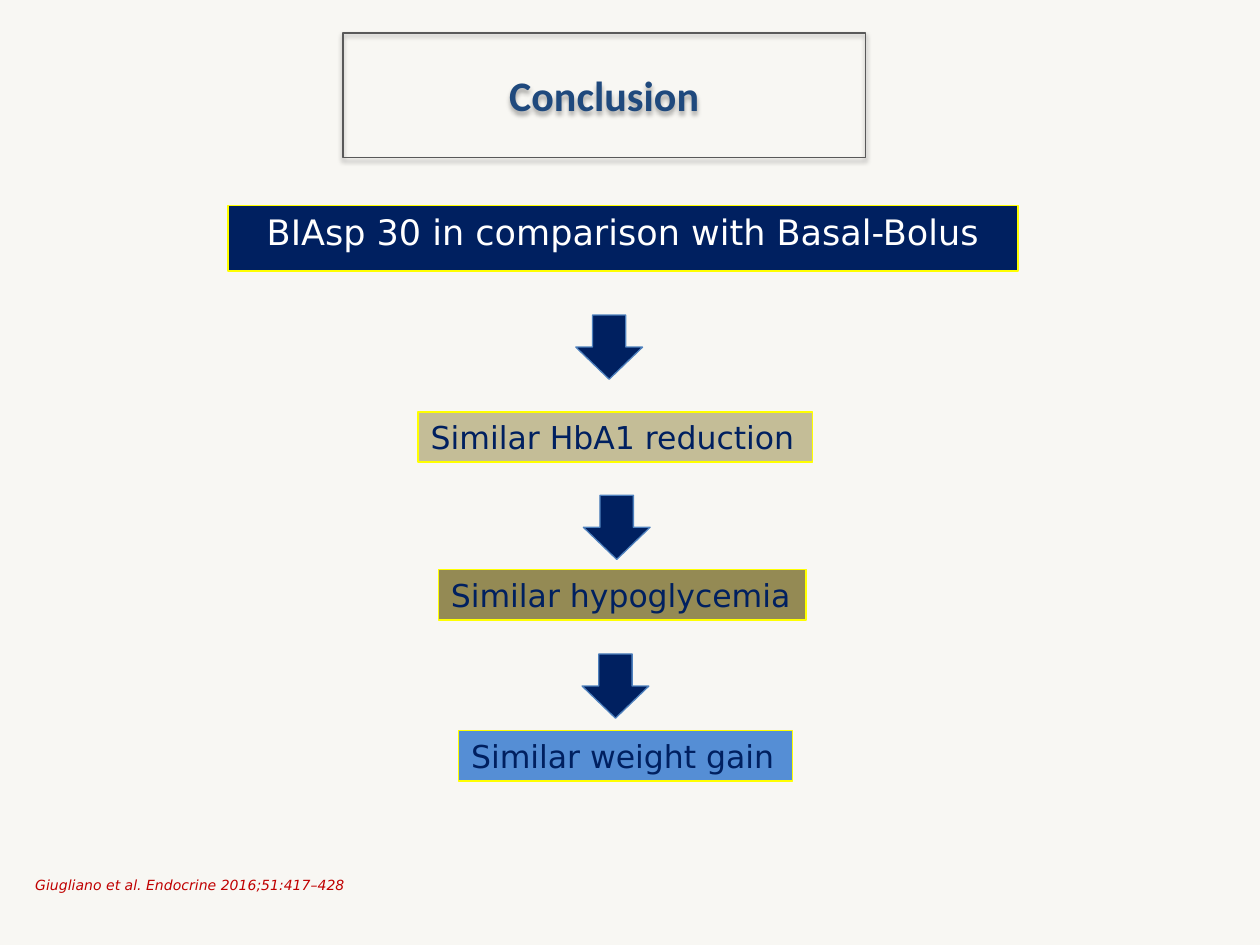
import pptx
import pptx.dml.color
import pptx.enum.shapes
import pptx.enum.text
import pptx.oxml
import pptx.oxml.ns
import pptx.util

Inches = pptx.util.Inches
Pt = pptx.util.Pt
RGBColor = pptx.dml.color.RGBColor
MSO_SHAPE = pptx.enum.shapes.MSO_SHAPE
PP_ALIGN = pptx.enum.text.PP_ALIGN
MSO_ANCHOR = pptx.enum.text.MSO_ANCHOR
MSO_AUTO_SIZE = pptx.enum.text.MSO_AUTO_SIZE

PAPER = RGBColor(0xF8, 0xF7, 0xF3)
NAVY = RGBColor(0x00, 0x20, 0x60)
YELLOW = RGBColor(0xFF, 0xFF, 0x00)
WHITE = RGBColor(0xFF, 0xFF, 0xFF)
ARROW_EDGE = RGBColor(0x4F, 0x81, 0xBD)
TITLE_BLUE = RGBColor(0x1F, 0x49, 0x7D)
TITLE_EDGE = RGBColor(0x59, 0x59, 0x59)
TAN = RGBColor(0xC4, 0xBD, 0x97)
OLIVE = RGBColor(0x94, 0x8A, 0x54)
SKY = RGBColor(0x55, 0x8E, 0xD5)
RED = RGBColor(0xC0, 0x00, 0x00)

NAMESPACE = pptx.oxml.ns.nsdecls("a")
ROUNDED = f'<a:prstGeom {NAMESPACE} prst="roundRect"><a:avLst/></a:prstGeom>'
SOFT_SHADOW = (
    f'<a:effectLst {NAMESPACE}><a:outerShdw blurRad="{Pt(3.1)}" dist="{Pt(1.8)}" '
    'dir="5400000" rotWithShape="0"><a:srgbClr val="000000"><a:alpha val="35000"/>'
    '</a:srgbClr></a:outerShdw></a:effectLst>'
)


class ConclusionSlide:
    """Holds the slide and its style."""

    body_font = "DejaVu Sans"
    title_font = "Calibri"

    def __init__(self, presentation):
        self.slide = presentation.slides.add_slide(presentation.slide_layouts[1])
        background = self.slide.background.fill
        background.solid()
        background.fore_color.rgb = PAPER

    def place(self, shape, left, top, width, height):
        shape.left, shape.top = Inches(left), Inches(top)
        shape.width, shape.height = Inches(width), Inches(height)

    def paint(self, shape, fill, edge, weight):
        shape.fill.solid()
        shape.fill.fore_color.rgb = fill
        shape.line.color.rgb = edge
        shape.line.width = Pt(weight)

    def set_text(self, shape, text, size, color, font=body_font,
                 align=PP_ALIGN.LEFT, bold=False, italic=False):
        frame = shape.text_frame
        frame.text = text
        frame.word_wrap = True
        paragraph = frame.paragraphs[0]
        paragraph.alignment = align
        style = paragraph.runs[0].font
        style.name, style.size = font, Pt(size)
        style.bold, style.italic = bold, italic
        style.color.rgb = color
        return paragraph

    def title(self, text, *box):
        title = self.slide.shapes.title
        self.place(title, *box)
        self.set_text(title, text, 24, TITLE_BLUE, self.title_font, PP_ALIGN.CENTER, bold=True)
        title.text_frame.vertical_anchor = MSO_ANCHOR.MIDDLE
        # Rounded outline and shadow, in schema order
        properties = title.element.spPr
        properties.append(pptx.oxml.parse_xml(ROUNDED))
        title.fill.background()
        title.line.color.rgb = TITLE_EDGE
        title.line.width = Pt(1)
        properties.append(pptx.oxml.parse_xml(SOFT_SHADOW))

    def heading(self, text, *box):
        heading = self.slide.placeholders[1]
        self.place(heading, *box)
        self.paint(heading, NAVY, YELLOW, 1)
        paragraph = self.set_text(heading, text, 20, WHITE, align=PP_ALIGN.CENTER)
        frame = heading.text_frame
        frame.auto_size = MSO_AUTO_SIZE.NONE
        frame.margin_left = frame.margin_right = Inches(0.07)
        frame.margin_top = frame.margin_bottom = Inches(0.04)
        # No bullet and no hanging indent
        settings = paragraph._p.get_or_add_pPr()
        settings.set("marL", "0")
        settings.set("indent", "0")
        settings.append(pptx.oxml.parse_xml(f"<a:buNone {NAMESPACE}/>"))

    def finding(self, text, left, top, width, fill, weight):
        finding = self.slide.shapes.add_textbox(
            Inches(left), Inches(top), Inches(width), Inches(0.4))
        self.paint(finding, fill, YELLOW, weight)
        self.set_text(finding, text, 18, NAVY)
        finding.text_frame.auto_size = MSO_AUTO_SIZE.SHAPE_TO_FIT_TEXT

    def arrow(self, left, top):
        arrow = self.slide.shapes.add_shape(
            MSO_SHAPE.DOWN_ARROW, Inches(left), Inches(top), Inches(0.53), Inches(0.51))
        arrow.shadow.inherit = False
        self.paint(arrow, NAVY, ARROW_EDGE, 0.75)

    def citation(self, text, left, top, width, height):
        citation = self.slide.shapes.add_textbox(
            Inches(left), Inches(top), Inches(width), Inches(height))
        paragraph = self.set_text(citation, text, 8, RED, italic=True)
        paragraph.space_before = Pt(1.6)
        frame = citation.text_frame
        frame.margin_left = frame.margin_top = frame.margin_bottom = 0
        frame.margin_right = Inches(0.24)


def main():
    presentation = pptx.Presentation()
    presentation.slide_width, presentation.slide_height = Inches(10), Inches(7.5)
    conclusion = ConclusionSlide(presentation)

    # Title and comparison
    conclusion.title("Conclusion", 2.72, 0.26, 4.15, 0.99)
    conclusion.heading("BIAsp 30 in comparison with Basal-Bolus", 1.81, 1.63, 6.27, 0.52)

    # Each arrow leads to the finding below it
    steps = [
        ((4.57, 2.5), ("Similar HbA1 reduction", 3.32, 3.27, 3.13, TAN, 1)),
        ((4.63, 3.93), ("Similar hypoglycemia", 3.48, 4.52, 2.92, OLIVE, 1)),
        ((4.62, 5.19), ("Similar weight gain", 3.64, 5.8, 2.65, SKY, 0.75)),
    ]
    for arrow, finding in steps:
        conclusion.arrow(*arrow)
        conclusion.finding(*finding)

    # Source of the findings
    conclusion.citation("Giugliano et al. Endocrine 2016;51:417–428", 0.28, 6.96, 3.97, 0.35)

    presentation.save("out.pptx")


if __name__ == "__main__":
    main()
